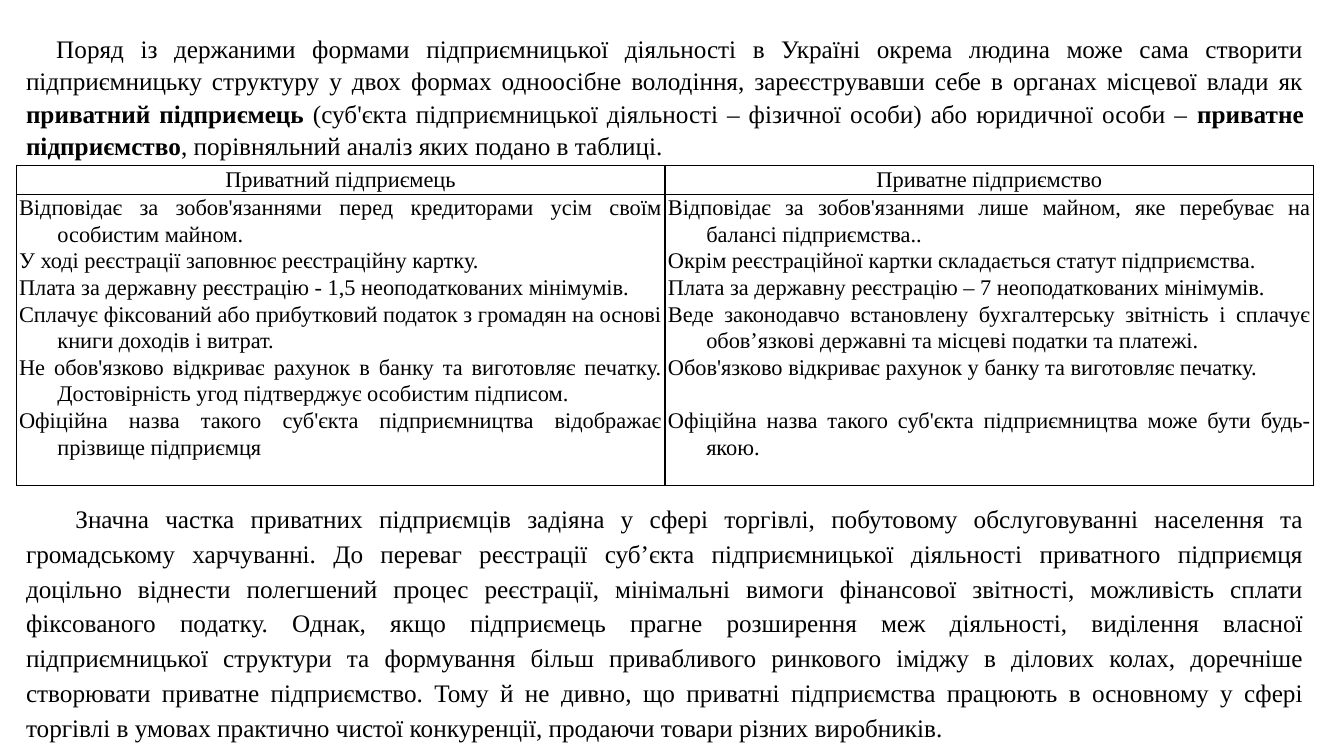
from dataclasses import dataclass

from lxml import etree
from pptx import Presentation
from pptx import util as u
from pptx.dml import color
from pptx.enum import text
from pptx.oxml import ns


@dataclass(frozen=True)
class Theme:
    font: str = "Times New Roman"
    ink: str = "000000"
    paper: str = "FFFFFF"
    prose_size: int = 18
    table_size: int = 16
    table_spacing: float = 1.07
    border: float = 1
    skipped_line: float = 19


class SlideWriter:
    def __init__(self, deck, theme):
        self.theme = theme
        self.width, self.height = deck.slide_width, deck.slide_height
        self.slide = deck.slides.add_slide(deck.slide_layouts[6])
        background = self.slide.background.fill
        background.solid()
        background.fore_color.rgb = color.RGBColor.from_string(theme.paper)

    def across(self, percent):
        return round(self.width * percent / 100)

    def down(self, percent):
        return round(self.height * percent / 100)

    def box(self, left, top, width, height):
        return self.across(left), self.down(top), self.across(width), self.down(height)

    def paragraph(self, paragraph, runs, size, spacing, align, margin=0, indent=0):
        paragraph.alignment = align
        paragraph.line_spacing = spacing
        properties = paragraph._p.get_or_add_pPr()
        properties.set("marL", str(u.Inches(margin)))
        properties.set("indent", str(u.Inches(indent)))
        for wording, bold in runs:
            run = paragraph.add_run()
            run.text = wording
            run.font.name = self.theme.font
            run.font.size = u.Pt(size)
            run.font.bold = bold
            run.font.color.rgb = color.RGBColor.from_string(self.theme.ink)

    def prose(self, place, runs, spacing, indent):
        frame = self.slide.shapes.add_textbox(*self.box(*place)).text_frame
        frame.word_wrap = True
        frame.auto_size = text.MSO_AUTO_SIZE.SHAPE_TO_FIT_TEXT
        self.paragraph(frame.paragraphs[0], runs, self.theme.prose_size, spacing,
                       text.PP_ALIGN.JUSTIFY, indent=indent)

    def cell(self, cell):
        cell.margin_left = cell.margin_right = u.Inches(0.03)
        cell.margin_top = cell.margin_bottom = 0
        cell.fill.background()
        properties = cell._tc.get_or_add_tcPr()
        for position, side in enumerate(("lnL", "lnR", "lnT", "lnB")):
            line = etree.Element(ns.qn(f"a:{side}"), w=str(u.Pt(self.theme.border)))
            fill = etree.SubElement(line, ns.qn("a:solidFill"))
            etree.SubElement(fill, ns.qn("a:srgbClr"), val=self.theme.ink)
            properties.insert(position, line)

    def comparison(self, place, row_heights, columns):
        table = self.slide.shapes.add_table(
            len(row_heights), len(columns), *self.box(*place)).table
        table.first_row = table.horz_banding = False
        for row, height in zip(table.rows, row_heights):
            row.height = self.down(height)
        for index, (heading, traits, after_gap) in enumerate(columns):
            header, body = table.cell(0, index), table.cell(1, index)
            self.cell(header)
            self.cell(body)
            self.paragraph(header.text_frame.paragraphs[0], [(heading, False)],
                           self.theme.table_size, self.theme.table_spacing,
                           text.PP_ALIGN.CENTER)
            for order, trait in enumerate(traits):
                frame = body.text_frame
                line = frame.add_paragraph() if order else frame.paragraphs[0]
                self.paragraph(line, [(trait, False)], self.theme.table_size,
                               self.theme.table_spacing, text.PP_ALIGN.JUSTIFY,
                               margin=0.38, indent=-0.38)
                if order == after_gap:
                    line.space_before = u.Pt(self.theme.skipped_line)


LEFT, WIDTH = 1.2, 96.55

INTRODUCTION = [
    ("Поряд із держаними формами підприємницької діяльності в Україні окрема людина "
     "може сама створити підприємницьку структуру у двох формах одноосібне володіння, "
     "зареєструвавши себе в органах місцевої влади як ", False),
    ("приватний підприємець", True),
    (" (суб'єкта підприємницької діяльності – фізичної особи) або юридичної особи – ", False),
    ("приватне підприємство", True),
    (", порівняльний аналіз яких подано в таблиці.", False),
]

ENTREPRENEUR = [
    "Відповідає за зобов'язаннями перед кредиторами усім своїм особистим майном.",
    "У ході реєстрації заповнює реєстраційну картку.",
    "Плата за державну реєстрацію - 1,5 неоподаткованих мінімумів.",
    "Сплачує фіксований або прибутковий податок з громадян на основі книги доходів і витрат.",
    "Не обов'язково відкриває рахунок в банку та виготовляє печатку. "
    "Достовірність угод підтверджує особистим підписом.",
    "Офіційна назва такого суб'єкта підприємництва відображає прізвище підприємця",
]

ENTERPRISE = [
    "Відповідає за зобов'язаннями лише майном, яке перебуває на балансі підприємства..",
    "Окрім реєстраційної картки складається статут підприємства.",
    "Плата за державну реєстрацію – 7 неоподаткованих мінімумів.",
    "Веде законодавчо встановлену бухгалтерську звітність і сплачує обов’язкові "
    "державні та місцеві податки та платежі.",
    "Обов'язково відкриває рахунок у банку та виготовляє печатку.",
    "Офіційна назва такого суб'єкта підприємництва може бути будь-якою.",
]

CONCLUSION = [
    ("Значна частка приватних підприємців задіяна у сфері торгівлі, побутовому "
     "обслуговуванні населення та громадському харчуванні. До переваг реєстрації "
     "суб’єкта підприємницької діяльності приватного підприємця доцільно віднести "
     "полегшений процес реєстрації, мінімальні вимоги фінансової звітності, можливість "
     "сплати фіксованого податку. Однак, якщо підприємець прагне розширення меж "
     "діяльності, виділення власної підприємницької структури та формування більш "
     "привабливого ринкового іміджу в ділових колах, доречніше створювати приватне "
     "підприємство. Тому й не дивно, що приватні підприємства працюють в основному у "
     "сфері торгівлі в умовах практично чистої конкуренції, продаючи товари різних "
     "виробників.", False),
]


def main():
    deck = Presentation()
    deck.slide_width, deck.slide_height = u.Inches(13.33), u.Inches(7.5)
    writer = SlideWriter(deck, Theme())
    writer.prose((LEFT, 3.47, WIDTH, 18.4), INTRODUCTION, spacing=1.07, indent=0.3)
    writer.comparison((LEFT, 21.87, WIDTH, 42.26), (3.73, 38.53), [
        ("Приватний підприємець", ENTREPRENEUR, None),
        ("Приватне підприємство", ENTERPRISE, 5),
    ])
    writer.prose((LEFT, 65.33, WIDTH, 33.87), CONCLUSION, spacing=1.15, indent=0.49)
    deck.save("out.pptx")


if __name__ == "__main__":
    main()
